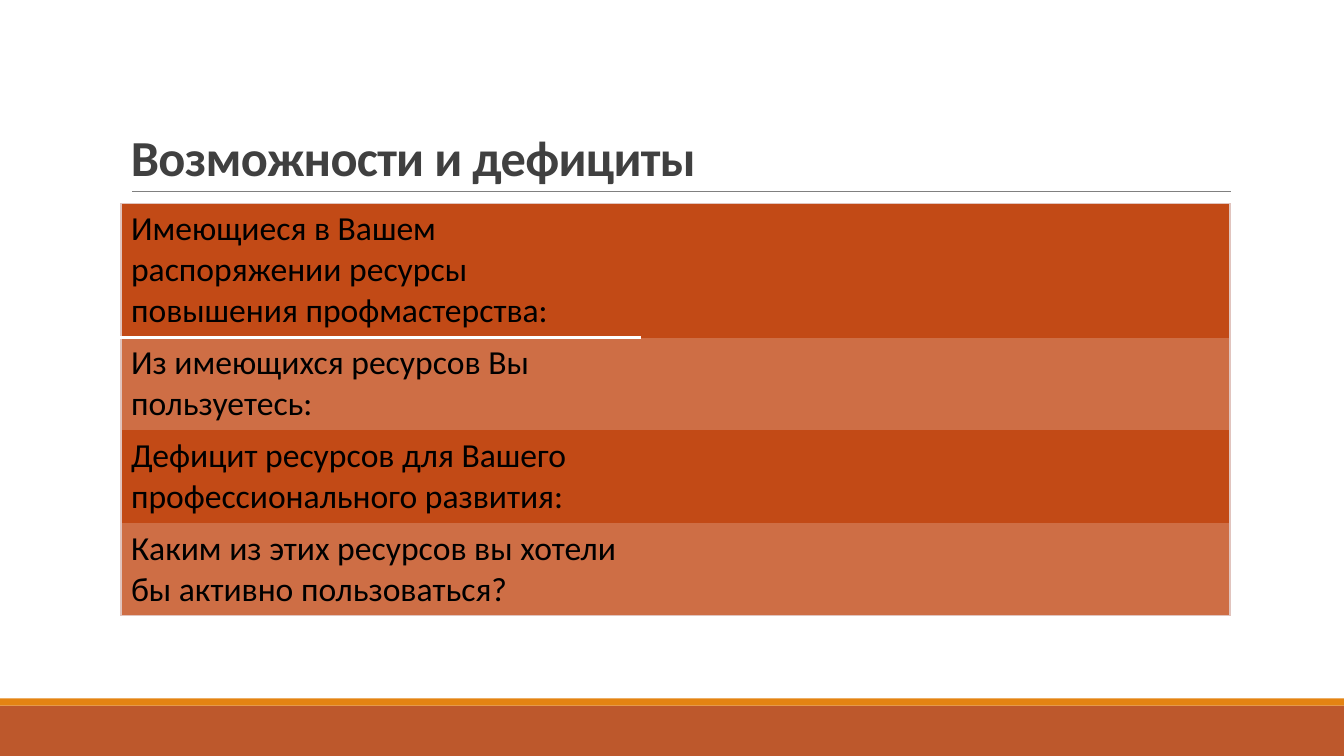
from lxml import etree
from pptx import Presentation
from pptx.dml.color import RGBColor
from pptx.enum.shapes import MSO_CONNECTOR, MSO_SHAPE
from pptx.enum.text import MSO_ANCHOR
from pptx.oxml.ns import qn
from pptx.util import Inches, Pt

LINE = MSO_CONNECTOR.STRAIGHT
RECT = MSO_SHAPE.RECTANGLE

# Content
TITLE = "Возможности и дефициты"
ROWS = [
    ("Имеющиеся в Вашем распоряжении ресурсы повышения профмастерства:", 3),
    ("Из имеющихся ресурсов Вы пользуетесь:", 2),
    ("Дефицит ресурсов для Вашего профессионального развития:", 2),
    ("Каким из этих ресурсов вы хотели бы активно пользоваться?", 2),
]
COLORS = {
    "base": "BD582C", "strip": "E48312", "rule": "808080", "title": "404040",
    "text": "000000", "dark": "C24A16", "light": "CE6E45",
    "edge": "E1C4BE", "split": "FFFFFF",
}
FONT = "Calibri"
NO_STYLE = "{2D5ABB26-0587-4C30-8999-92F81FD0307C}"

# Layout in inches
WIDE, HIGH = 13.33, 7.5
LEFT, COLS = 1.2, (5.16, 5.84)
BANDS = [("base", 7, 0.5), ("strip", 6.93, 0.07)]
TOP, LEAD, PAD = 2.02, 0.41, 0.1


def paint(part, name):
    part.fill.solid()
    part.fill.fore_color.rgb = RGBColor.from_string(COLORS[name])


def write(para, text, size, name, bold=False):
    run = para.add_run()
    run.text = text
    run.font.name, run.font.size, run.font.bold = FONT, Pt(size), bold
    run.font.color.rgb = RGBColor.from_string(COLORS[name])
    return run


def border(cell, side, name, width):
    props = cell._tc.get_or_add_tcPr()
    line = etree.SubElement(props, qn("a:ln" + side), w=str(Pt(width)))
    fill = etree.SubElement(line, qn("a:solidFill"))
    etree.SubElement(fill, qn("a:srgbClr"), val=COLORS[name])


deck = Presentation()
deck.slide_width, deck.slide_height = Inches(WIDE), Inches(HIGH)
slide = deck.slides.add_slide(deck.slide_layouts[6])
shapes = slide.shapes

# Bottom bands
for name, top, height in BANDS:
    band = shapes.add_shape(RECT, 0, Inches(top), Inches(WIDE), Inches(height))
    band.shadow.inherit = False
    paint(band, name)
    band.line.fill.background()

# Rule under the title
rule = shapes.add_connector(LINE, Inches(1.31), Inches(1.9), Inches(12.21), Inches(1.9))
rule.line.color.rgb = RGBColor.from_string(COLORS["rule"])
rule.line.width = Pt(0.5)
etree.SubElement(rule._element.spPr, qn("a:effectLst"))

# Title
box = shapes.add_textbox(Inches(LEFT), Inches(0.31), Inches(sum(COLS)), Inches(1.59))
frame = box.text_frame
frame.word_wrap = True
frame.vertical_anchor = MSO_ANCHOR.BOTTOM
para = frame.paragraphs[0]
para.line_spacing = 0.85
run = write(para, TITLE, 36, "title", True)
run._r.get_or_add_rPr().set("spc", "-50")

# Table: row height follows its count of text lines
tall = [lines * LEAD + PAD for _, lines in ROWS]
last = len(ROWS) - 1
holder = shapes.add_table(len(ROWS), len(COLS), Inches(LEFT), Inches(TOP),
                          Inches(sum(COLS)), Inches(sum(tall)))
table = holder.table
table.first_row = table.horz_banding = False
table._tbl.tblPr.find(qn("a:tableStyleId")).text = NO_STYLE
for c, width in enumerate(COLS):
    table.columns[c].width = Inches(width)
for r, (text, _) in enumerate(ROWS):
    table.rows[r].height = Inches(tall[r])
    for c in range(len(COLS)):
        cell = table.cell(r, c)
        border(cell, "R" if c else "L", "edge", 1)
        if r == 0:
            border(cell, "T", "edge", 1)
        if r == 0 and c == 0:
            border(cell, "B", "split", 2)
        if r == last:
            border(cell, "B", "edge", 1)
        paint(cell, "light" if r % 2 else "dark")
    write(table.cell(r, 0).text_frame.paragraphs[0], text, 24, "text")

deck.save("out.pptx")
